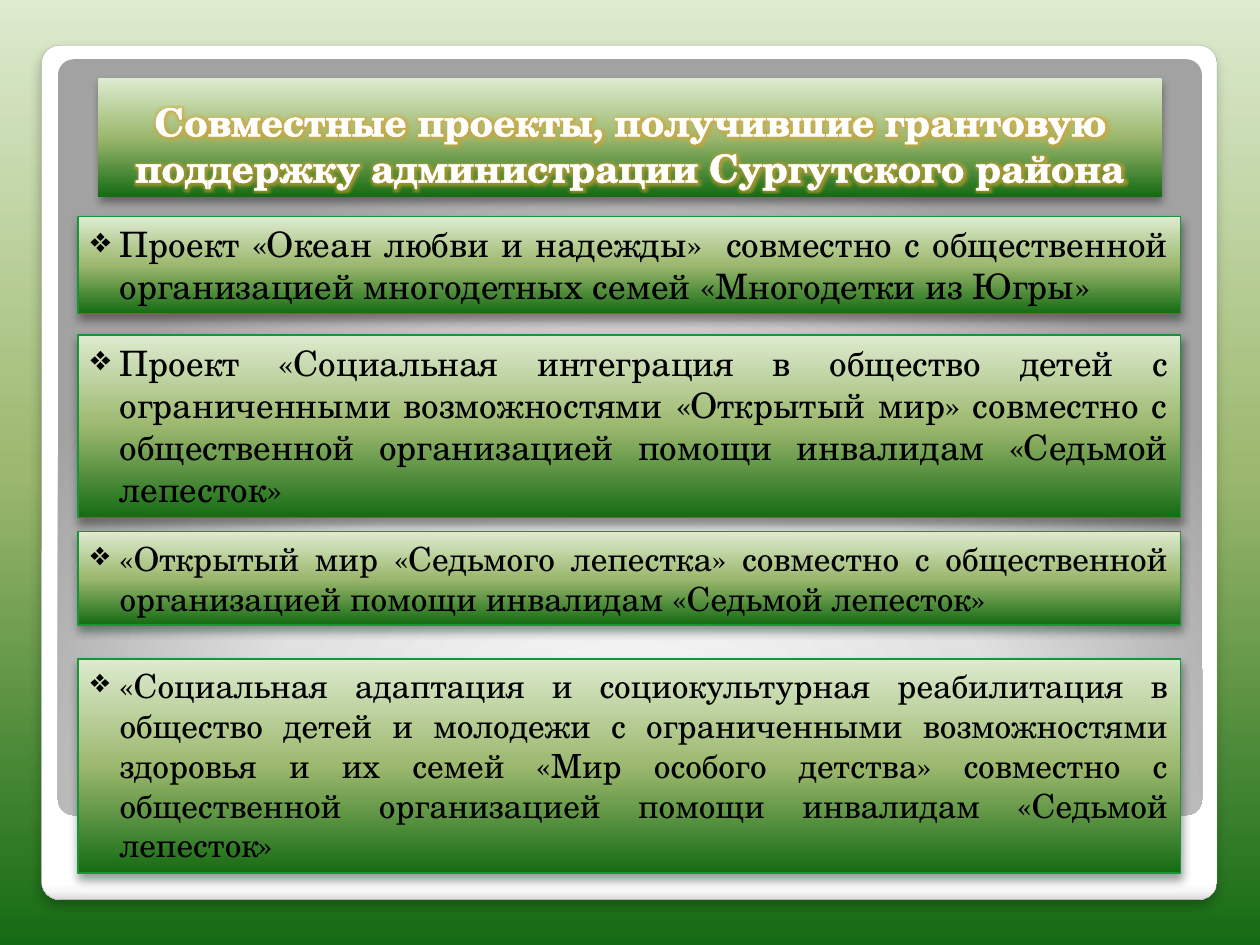
from lxml.etree import SubElement
from pptx import Presentation
from pptx.dml.color import RGBColor
from pptx.enum.shapes import MSO_SHAPE
from pptx.enum.text import MSO_ANCHOR, MSO_AUTO_SIZE, PP_ALIGN
from pptx.oxml import parse_xml
from pptx.oxml.ns import nsdecls, qn
from pptx.util import Inches, Pt

WIDE, HIGH = 10, 7.5
FONT = "TeX Gyre Schola"
INK = {"text": "000000", "title": "FFFFFF", "edge": "159737",
       "rim": "A4A4A4", "shade": "000000", "glow": "D8A030"}
GREEN = [(0, "DDEBCF"), (50, "9CB86E"), (100, "156B13")]
WHITE = [(0, "FFFFFF"), (98, "FFFFFF"), (99, "F7F7F7"), (100, "DADADA")]
GREY = [(0, "FFFFFF"), (55, "E1E1E1"), (100, "A2A2A2")]
DOWN = '<a:lin ang="5400000" scaled="0"/>'
ROUND = ('<a:path path="circle"><a:fillToRect l="50000" t="175000" '
         'r="50000" b="-75000"/></a:path>')
TITLE = ("Совместные проекты, получившие грантовую "
         "поддержку администрации Сургутского района")
# top, height, text size, text
CARDS = [
    (1.72, 0.77, 20, "Проект «Океан любви и надежды»  совместно с общественной "
     "организацией многодетных семей «Многодетки из Югры»"),
    (2.66, 1.45, 20, "Проект «Социальная интеграция в общество детей с "
     "ограниченными возможностями «Открытый мир» совместно с общественной "
     "организацией помощи инвалидам «Седьмой лепесток»"),
    (4.22, 0.74, 19, "«Открытый мир «Седьмого лепестка» совместно с общественной "
     "организацией помощи инвалидам «Седьмой лепесток»"),
    (5.23, 1.7, 19, "«Социальная адаптация и социокультурная реабилитация в "
     "общество детей и молодежи с ограниченными возможностями здоровья и их "
     "семей «Мир особого детства» совместно с общественной организацией "
     "помощи инвалидам «Седьмой лепесток»"),
]


def color(name):
    return RGBColor.from_string(INK[name])


def apply(item, **values):
    for key, value in values.items():
        setattr(item, key, value)


def place(shape, left, top, width, height):
    apply(shape, left=Inches(left), top=Inches(top),
          width=Inches(width), height=Inches(height))


def blend(fill, host, stops, course=DOWN):
    """Fill the host with a gradient of the given stops."""
    fill.gradient()
    old = host.find(".//" + qn("a:gradFill"))
    marks = "".join(f'<a:gs pos="{pos * 1000}"><a:srgbClr val="{tone}"/></a:gs>'
                    for pos, tone in stops)
    old.getparent().replace(old, parse_xml(
        f'<a:gradFill {nsdecls("a")} rotWithShape="1">'
        f'<a:gsLst>{marks}</a:gsLst>{course}</a:gradFill>'))


def shade(shape, alpha=40, blur=5.2, gap=3):
    """Drop a soft shadow straight below the shape."""
    shape.shadow.inherit = False
    drop = SubElement(shape._element.spPr.find(qn("a:effectLst")),
                      qn("a:outerShdw"), blurRad=str(Pt(blur)),
                      dist=str(Pt(gap)), dir="5400000", algn="t", rotWithShape="0")
    tone = SubElement(drop, qn("a:srgbClr"), val=INK["shade"])
    SubElement(tone, qn("a:alpha"), val=str(alpha * 1000))


def edge(shape, name, width):
    shape.line.color.rgb = color(name)
    shape.line.width = Pt(width)


def panel(slide, box, stops, course=DOWN):
    shape = slide.shapes.add_shape(MSO_SHAPE.ROUNDED_RECTANGLE, 0, 0, 0, 0)
    place(shape, *box)
    shape.adjustments[0] = 0.021
    blend(shape.fill, shape._element, stops, course)
    shape.shadow.inherit = False
    shape.line.fill.background()
    return shape


def write(shape, text, size, name, align, anchor, bold=False):
    frame = shape.text_frame
    apply(frame, word_wrap=True, auto_size=MSO_AUTO_SIZE.NONE,
          vertical_anchor=anchor, margin_left=Inches(0.1),
          margin_right=Inches(0.1), margin_top=Inches(0.05),
          margin_bottom=Inches(0.05))
    para = frame.paragraphs[0]
    apply(para, alignment=align, space_before=Pt(0), line_spacing=1.0)
    run = para.add_run()
    run.text = text
    apply(run.font, name=FONT, size=Pt(size), bold=bold)
    run.font.color.rgb = color(name)
    return para


def glow(run):
    """Outline the letters in white and set a golden glow around them."""
    props = run.font._element
    props.insert(0, parse_xml(
        f'<a:ln {nsdecls("a")} w="{Pt(0.75)}"><a:solidFill>'
        f'<a:srgbClr val="{INK["title"]}"/></a:solidFill></a:ln>'))
    props.find(qn("a:solidFill")).addnext(parse_xml(
        f'<a:effectLst {nsdecls("a")}><a:glow rad="{Pt(3.5)}">'
        f'<a:srgbClr val="{INK["glow"]}"><a:alpha val="60000"/></a:srgbClr>'
        '</a:glow></a:effectLst>'))


def head(slide):
    shape = slide.shapes.title
    slide.shapes._spTree.append(shape._element)
    place(shape, 0.78, 0.62, 8.44, 0.94)
    blend(shape.fill, shape._element, GREEN)
    shade(shape)
    para = write(shape, TITLE, 22, "title", PP_ALIGN.CENTER,
                 MSO_ANCHOR.BOTTOM, bold=True)
    glow(para.runs[0])


def card(slide, top, height, size, text):
    shape = slide.shapes.add_shape(MSO_SHAPE.RECTANGLE, 0, 0, 0, 0)
    place(shape, 0.62, top, 8.75, height)
    blend(shape.fill, shape._element, GREEN)
    edge(shape, "edge", 0.75)
    shade(shape)
    para = write(shape, text, size, "text", PP_ALIGN.JUSTIFY, MSO_ANCHOR.TOP)
    props = para._p.get_or_add_pPr()
    props.set("marL", str(Inches(0.23)))
    props.set("indent", str(-Inches(0.23)))
    SubElement(props, qn("a:buChar"), char="❖")


def main():
    deck = Presentation()
    apply(deck, slide_width=Inches(WIDE), slide_height=Inches(HIGH))
    slide = deck.slides.add_slide(deck.slide_layouts[5])
    blend(slide.background.fill, slide._element, GREEN)
    back = panel(slide, (0.33, 0.36, 9.33, 6.78), WHITE)
    edge(back, "rim", 0.16)
    shade(back, 25, 6, 4)
    panel(slide, (0.46, 0.47, 9.08, 6), GREY, ROUND)
    head(slide)
    for item in CARDS:
        card(slide, *item)
    deck.save("out.pptx")


if __name__ == "__main__":
    main()
